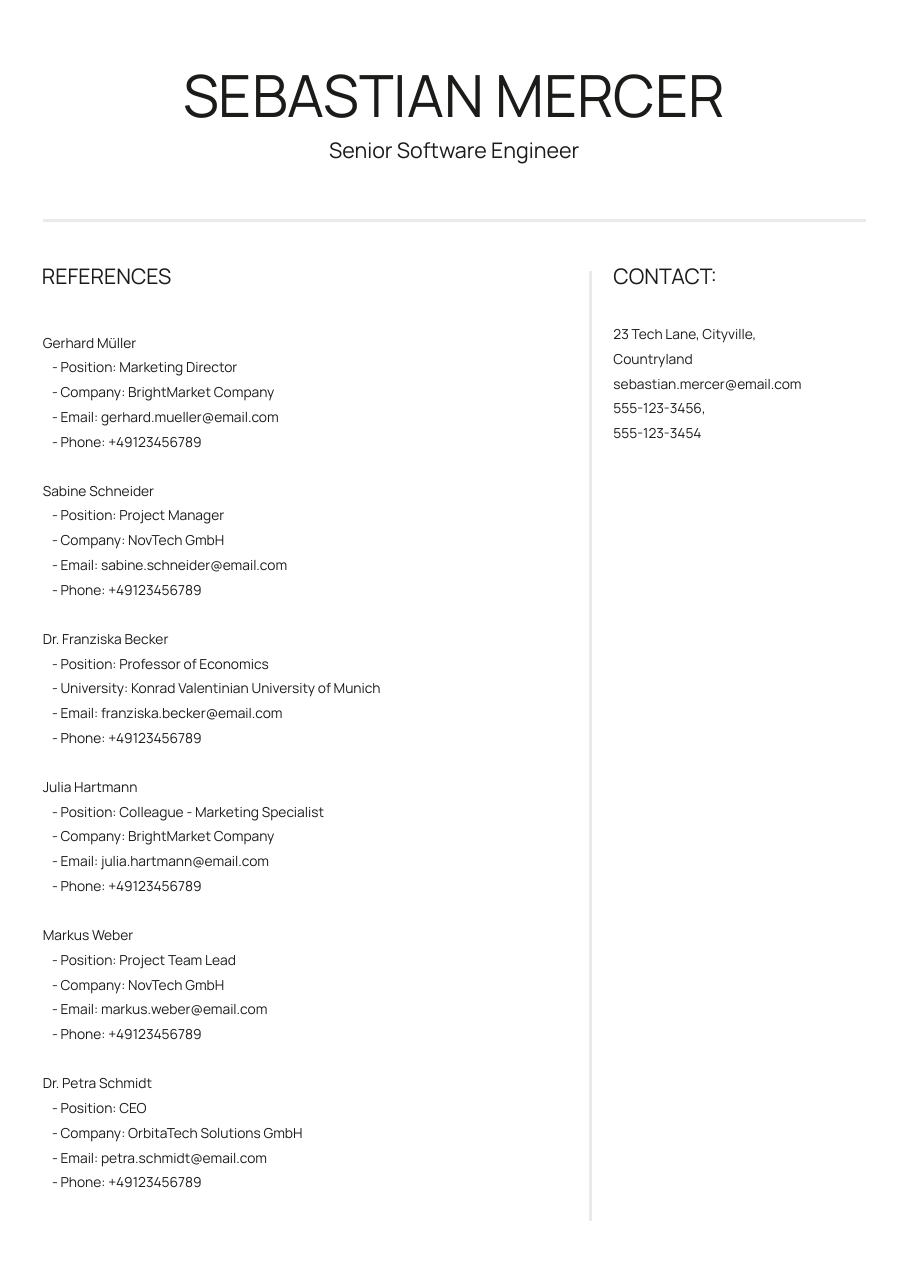
from lxml import etree
from pptx import Presentation
from pptx.dml.color import RGBColor
from pptx.enum.shapes import MSO_CONNECTOR
from pptx.enum.text import MSO_ANCHOR, MSO_AUTO_SIZE, PP_ALIGN
from pptx.oxml.ns import qn
from pptx.util import Pt

STRAIGHT = MSO_CONNECTOR.STRAIGHT
TOP = MSO_ANCHOR.TOP
GROW = MSO_AUTO_SIZE.SHAPE_TO_FIT_TEXT
LEFT, CENTER = PP_ALIGN.LEFT, PP_ALIGN.CENTER

FONT = "Manrope"
COLORS = {"ink": "1B1B1A", "rule": "EAEAEA"}
PAGE_WIDTH, PAGE_HEIGHT = 595.44, 841.68
COMPARISON_LAYOUT = 4
ENTRY_INDENT = 6
REFERENCE_GAP = 15.55

CONTACT_LINES = [
    "23 Tech Lane, Cityville,",
    "Countryland",
    "sebastian.mercer@email.com",
    "555-123-3456,",
    "555-123-3454",
]

# Name, position, kind of employer, employer, e-mail user
REFERENCES = [
    ("Gerhard Müller", "Marketing Director", "Company",
     "BrightMarket Company", "gerhard.mueller"),
    ("Sabine Schneider", "Project Manager", "Company",
     "NovTech GmbH", "sabine.schneider"),
    ("Dr. Franziska Becker", "Professor of Economics", "University",
     "Konrad Valentinian University of Munich", "franziska.becker"),
    ("Julia Hartmann", "Colleague - Marketing Specialist", "Company",
     "BrightMarket Company", "julia.hartmann"),
    ("Markus Weber", "Project Team Lead", "Company",
     "NovTech GmbH", "markus.weber"),
    ("Dr. Petra Schmidt", "CEO", "Company",
     "OrbitaTech Solutions GmbH", "petra.schmidt"),
]


def place(shape, box):
    """Move a text shape to a box in points and clear its insets."""
    shape.left, shape.top, shape.width, shape.height = map(Pt, box)
    frame = shape.text_frame
    frame.margin_left = frame.margin_top = 0
    frame.margin_right = frame.margin_bottom = 0
    frame.word_wrap = True
    frame.auto_size = GROW
    frame.vertical_anchor = TOP
    return frame


def write(frame, text, size=9, align=LEFT, spacing=1.0, before=0, indent=0):
    """Add one formatted paragraph, filling the first one if it is empty."""
    first = frame.paragraphs[0]
    paragraph = frame.add_paragraph() if first.runs else first
    paragraph.alignment = align
    paragraph.line_spacing = spacing
    paragraph.space_before = Pt(before)
    paragraph.space_after = Pt(0)
    properties = paragraph._p.get_or_add_pPr()
    properties.set("marL", str(Pt(indent)))
    properties.set("indent", "0")
    etree.SubElement(properties, qn("a:buNone"))
    run = paragraph.add_run()
    run.text = text
    run.font.name = FONT
    run.font.size = Pt(size)
    run.font.bold = False
    run.font.color.rgb = RGBColor.from_string(COLORS["ink"])


def draw_rule(slide, x1, y1, x2, y2):
    rule = slide.shapes.add_connector(STRAIGHT, Pt(x1), Pt(y1), Pt(x2), Pt(y2))
    rule.line.color.rgb = RGBColor.from_string(COLORS["rule"])
    rule.line.width = Pt(1.5)
    etree.SubElement(rule._element.spPr, qn("a:effectLst"))


def build_header(slide, left, top, width, height):
    name = place(slide.shapes.title, (left + 68, top, width - 136, 46))
    write(name, "SEBASTIAN MERCER", size=38, align=CENTER)

    role_box = slide.shapes.add_textbox(0, 0, 0, 0)
    role = place(role_box, (left + 133, top + 50.4, width - 266, 17))
    write(role, "Senior Software Engineer", size=14, align=CENTER)

    draw_rule(slide, left, top + height, left + width, top + height)


def build_references(slide, left, top, width, height):
    heading = place(slide.placeholders[1], (left - 0.6, top, width, 17))
    write(heading, "REFERENCES", size=14)

    people = place(slide.placeholders[2], (left, top + 41, width, height - 41))
    for number, (name, position, kind, employer, user) in enumerate(REFERENCES):
        write(people, name, spacing=1.5, before=REFERENCE_GAP if number else 0)
        details = [
            ("Position", position),
            (kind, employer),
            ("Email", f"{user}@email.com"),
            ("Phone", "+49123456789"),
        ]
        for label, value in details:
            write(people, f"- {label}: {value}", spacing=1.5, indent=ENTRY_INDENT)


def build_contact(slide, left, top, width, height):
    draw_rule(slide, left, top + 5, left, top + height)

    heading = place(slide.placeholders[3], (left + 15, top, width - 15, 17))
    write(heading, "CONTACT:", size=14)

    lines = place(slide.placeholders[4], (left + 15, top + 35.3, width - 15, 75))
    for line in CONTACT_LINES:
        write(lines, line, spacing=1.5)


def main():
    presentation = Presentation()
    presentation.slide_width = Pt(PAGE_WIDTH)
    presentation.slide_height = Pt(PAGE_HEIGHT)
    layout = presentation.slide_layouts[COMPARISON_LAYOUT]
    slide = presentation.slides.add_slide(layout)

    build_header(slide, 28, 39, 538, 105)
    build_references(slide, 28, 172, 340, 595)
    build_contact(slide, 386, 172, 180, 626)

    presentation.save("out.pptx")


if __name__ == "__main__":
    main()
